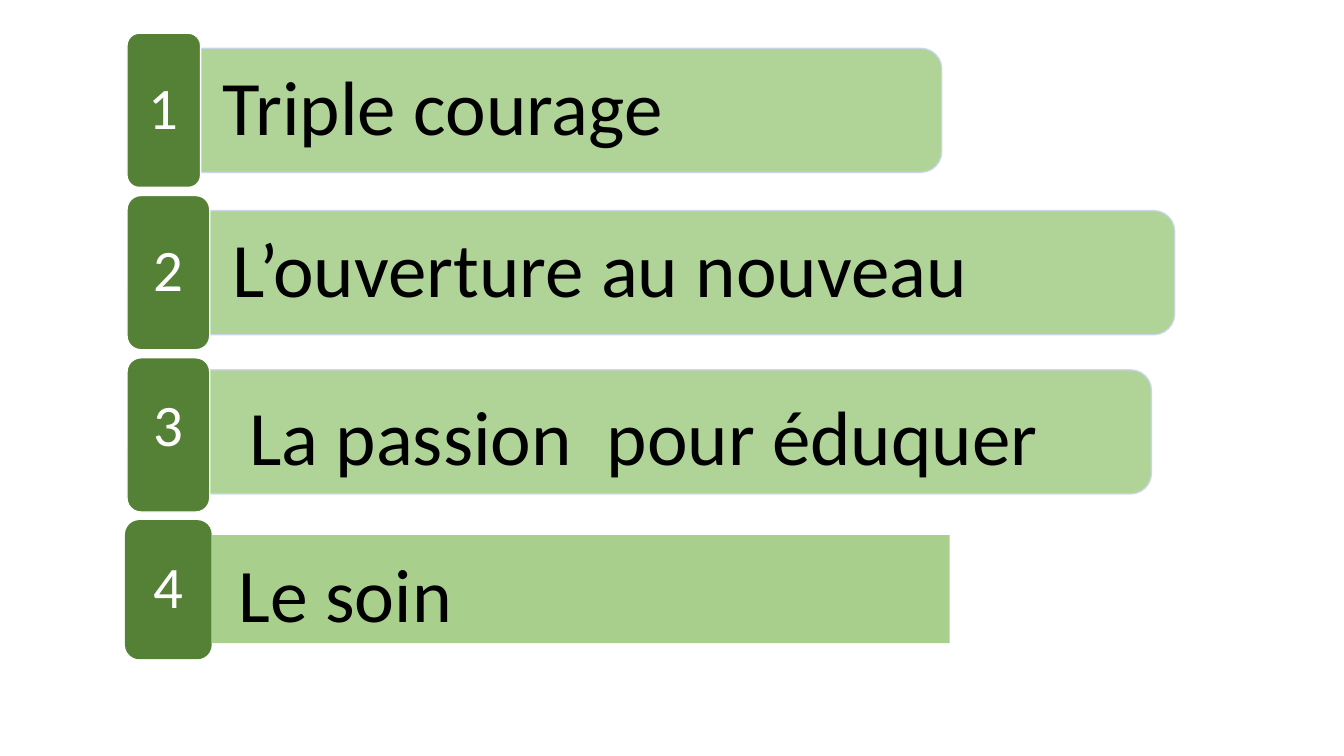
from dataclasses import dataclass

from lxml import etree
from pptx import Presentation
from pptx.dml.color import RGBColor
from pptx.enum.shapes import MSO_SHAPE
from pptx.enum.text import MSO_ANCHOR, PP_ALIGN
from pptx.oxml.ns import qn
from pptx.util import Inches, Pt

ROUNDED = MSO_SHAPE.ROUNDED_RECTANGLE
TAB = MSO_SHAPE.ROUND_2_SAME_RECTANGLE
PLAIN = MSO_SHAPE.RECTANGLE
MIDDLE, TOP = MSO_ANCHOR.MIDDLE, MSO_ANCHOR.TOP
CENTER, LEFT = PP_ALIGN.CENTER, PP_ALIGN.LEFT


@dataclass(frozen=True)
class Theme:
    font: str = "Calibri"
    bar: RGBColor = RGBColor(0xA8, 0xD0, 0x8C)
    bar_edge: RGBColor = RGBColor(0xCC, 0xD3, 0xEA)
    badge: RGBColor = RGBColor(0x54, 0x81, 0x35)
    white: RGBColor = RGBColor(0xFF, 0xFF, 0xFF)
    black: RGBColor = RGBColor(0, 0, 0)
    number_size: float = 42
    quality_size: float = 55
    last_size: float = 54
    bar_alpha: int = 90


@dataclass(frozen=True)
class Box:
    left: float
    top: float
    width: float
    height: float

    def emu(self) -> tuple:
        return tuple(Inches(v) for v in (self.left, self.top, self.width, self.height))

    def upright(self) -> "Box":
        """Frame that covers this box once it is turned by 90 degrees."""
        shift = (self.width - self.height) / 2
        return Box(self.left + shift, self.top - shift, self.height, self.width)


@dataclass(frozen=True)
class Quality:
    label: str
    bar: Box
    text: Box
    badge_width: float
    number_lift: float = 0


THEME = Theme()
BADGE_LEFT, BADGE_TOP, BADGE_HEIGHT, ROW_PITCH = 1.26, 0.33, 1.53, 1.61
QUALITIES = [
    Quality("Triple courage", Box(1.98, 0.48, 7.36, 1.23),
            Box(1.98, 0.54, 7.3, 1.11), 0.73),
    Quality("L’ouverture au nouveau", Box(2.08, 2.09, 9.57, 1.23),
            Box(2.08, 2.15, 9.51, 1.11), 0.82),
    Quality("La passion  pour éduquer", Box(2.05, 3.67, 9.37, 1.23),
            Box(2.24, 3.82, 8.69, 1.11), 0.82, number_lift=0.15),
]
LAST_LABEL = "Le soin"
LAST_BAR = Box(2.1, 5.31, 7.32, 1.07)
LAST_BADGE = Box(1.24, 5.16, 0.86, 1.38)


def write(holder, text: str, size: float, color: RGBColor, align, anchor,
          margins: tuple, spacing: float = 0.9) -> None:
    frame = holder.text_frame
    frame.text = text
    frame.word_wrap = True
    frame.vertical_anchor = anchor
    (frame.margin_left, frame.margin_top,
     frame.margin_right, frame.margin_bottom) = (Inches(m) for m in margins)
    paragraph = frame.paragraphs[0]
    paragraph.alignment = align
    paragraph.line_spacing = spacing
    font = paragraph.runs[0].font
    font.name, font.size, font.color.rgb = THEME.font, Pt(size), color


def add_panel(slide, kind, box: Box, fill: RGBColor, edge: RGBColor | None = None):
    panel = slide.shapes.add_shape(kind, *box.emu())
    panel.shadow.inherit = False
    panel.fill.solid()
    panel.fill.fore_color.rgb = fill
    if edge is None:
        panel.line.fill.background()
    else:
        panel.line.color.rgb = edge
        panel.line.width = Pt(1)
    return panel


def add_bar(slide, box: Box) -> None:
    bar = add_panel(slide, TAB, box.upright(), THEME.bar, THEME.bar_edge)
    bar.rotation = 90
    bar.adjustments[0], bar.adjustments[1] = 0.167, 0
    for color in bar.element.spPr.iter(qn("a:srgbClr")):
        etree.SubElement(color, qn("a:alpha"), val=str(THEME.bar_alpha * 1000))


def add_badge(slide, number: int, box: Box, edge: RGBColor | None = None,
              lift: float = 0) -> None:
    badge = add_panel(slide, ROUNDED, box, THEME.badge, edge)
    badge.adjustments[0] = 0.167
    write(badge, str(number), THEME.number_size, THEME.white, CENTER, MIDDLE,
          (0.17, 0.09, 0.17, 0.09 + lift))


def add_quality(slide, number: int, quality: Quality) -> None:
    add_bar(slide, quality.bar)
    label = slide.shapes.add_textbox(*quality.text.emu())
    write(label, quality.label, THEME.quality_size, THEME.black, LEFT, MIDDLE,
          (0.23, 0.11, 0.23, 0.11))
    badge_box = Box(BADGE_LEFT, BADGE_TOP + (number - 1) * ROW_PITCH,
                    quality.badge_width, BADGE_HEIGHT)
    add_badge(slide, number, badge_box, THEME.white, quality.number_lift)


def main() -> None:
    deck = Presentation()
    deck.slide_width, deck.slide_height = Inches(13.33), Inches(7.5)
    slide = deck.slides.add_slide(deck.slide_layouts[6])

    # Three numbered qualities on rounded bars
    for number, quality in enumerate(QUALITIES, start=1):
        add_quality(slide, number, quality)

    # Fourth quality on a plain bar
    add_badge(slide, len(QUALITIES) + 1, LAST_BADGE)
    last_bar = add_panel(slide, PLAIN, LAST_BAR, THEME.bar)
    write(last_bar, LAST_LABEL, THEME.last_size, THEME.black, LEFT, TOP,
          (0.27, 0.05, 0.1, 0.05), 1.07)

    deck.save("out.pptx")


if __name__ == "__main__":
    main()
